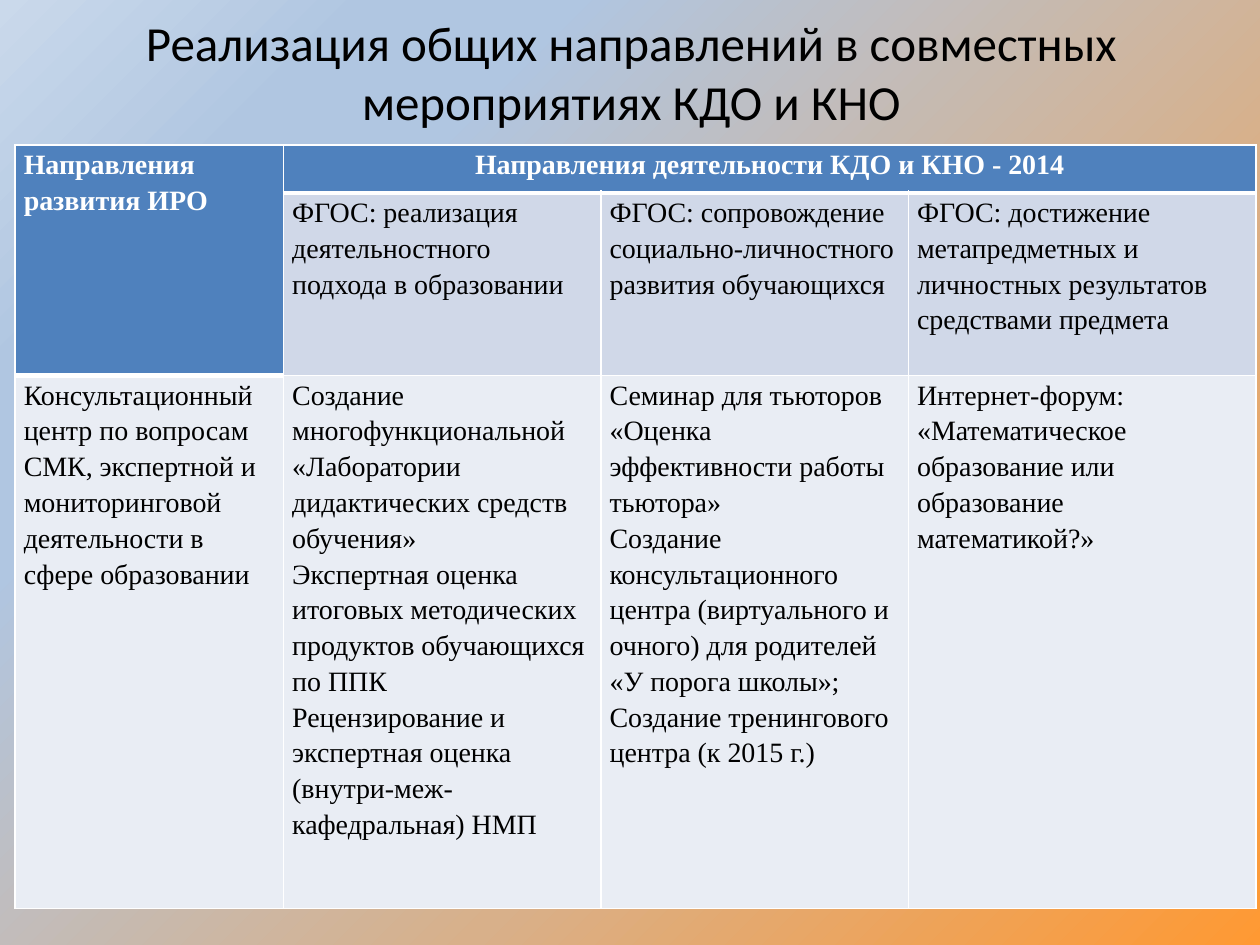
import pptx
import pptx.util
import pptx.dml.color
import pptx.enum.text
import pptx.oxml
import pptx.oxml.ns

Pt = pptx.util.Pt
RGBColor = pptx.dml.color.RGBColor
ALIGN = pptx.enum.text.PP_ALIGN
ANCHOR = pptx.enum.text.MSO_ANCHOR

BLACK = RGBColor(0x00, 0x00, 0x00)
WHITE = RGBColor(0xFF, 0xFF, 0xFF)
HEADER_BLUE = RGBColor(0x4F, 0x81, 0xBD)
BAND_DARK = RGBColor(0xD0, 0xD8, 0xE8)
BAND_LIGHT = RGBColor(0xE9, 0xED, 0xF4)
BACKGROUND_STOPS = [
    (0, RGBColor(0xFF, 0x99, 0x33)),
    (36, RGBColor(0xD8, 0xB0, 0x8A)),
    (74, RGBColor(0xB0, 0xC6, 0xE1)),
    (83, RGBColor(0xB0, 0xC6, 0xE1)),
    (100, RGBColor(0xCA, 0xD9, 0xEB)),
]

TITLE = "Реализация общих направлений в совместных мероприятиях КДО и КНО"
COLUMN_WIDTHS = [153.4, 181.4, 175.7, 198.7]
ROW_HEIGHTS = [27.4, 104.4, 304.6]
ROWS = [
    [
        ["Направления развития ИРО"],
        ["Направления деятельности КДО и КНО - 2014"],
        None,
        None,
    ],
    [
        None,
        ["ФГОС: реализация деятельностного подхода в образовании"],
        ["ФГОС: сопровождение социально-личностного развития обучающихся"],
        ["ФГОС: достижение метапредметных и личностных результатов средствами предмета"],
    ],
    [
        ["Консультационный центр по вопросам СМК, экспертной и мониторинговой "
         "деятельности в сфере образовании"],
        ["Создание многофункциональной «Лаборатории дидактических средств обучения»",
         "Экспертная оценка итоговых методических продуктов обучающихся по ППК",
         "Рецензирование и экспертная оценка (внутри-меж-кафедральная) НМП"],
        ["Семинар для тьюторов «Оценка эффективности работы тьютора»",
         "Создание консультационного центра (виртуального и очного) для родителей "
         "«У порога школы»; Создание тренингового центра (к 2015 г.)"],
        ["Интернет-форум: «Математическое образование или образование математикой?»"],
    ],
]


def apply_format(target, values):
    for name, value in values.items():
        setattr(target, name, value)


def write_paragraphs(frame, texts, para_format, font_format, color):
    for index, text in enumerate(texts):
        para = frame.paragraphs[0] if index == 0 else frame.add_paragraph()
        apply_format(para, para_format)
        span = para.add_run()
        span.text = text
        apply_format(span.font, font_format)
        span.font.color.rgb = color


def paint_background(page):
    fill = page.background.fill
    fill.gradient()
    fill.gradient_angle = 135
    stops = page.element.find(".//" + pptx.oxml.ns.qn("a:gsLst"))
    for stop in list(stops):
        stops.remove(stop)
    for position, color in BACKGROUND_STOPS:
        stops.append(pptx.oxml.parse_xml(
            f'<a:gs {pptx.oxml.ns.nsdecls("a")} pos="{position * 1000}">'
            f'<a:srgbClr val="{color}"/></a:gs>'))


def add_title(page, left, top, width, height):
    box = page.shapes.add_textbox(Pt(left), Pt(top), Pt(width), Pt(height))
    apply_format(box.text_frame, {"word_wrap": True, "vertical_anchor": ANCHOR.MIDDLE})
    write_paragraphs(box.text_frame, [TITLE], {"alignment": ALIGN.CENTER},
                     {"name": "Calibri", "size": Pt(28)}, BLACK)


def is_header(row, column):
    return row == 0 or (row == 1 and column == 0)


def set_borders(cell, widths):
    properties = cell._tc.get_or_add_tcPr()
    for side, width in widths.items():
        properties.append(pptx.oxml.parse_xml(
            f'<a:ln{side} {pptx.oxml.ns.nsdecls("a")} w="{Pt(width)}">'
            f'<a:solidFill><a:srgbClr val="{WHITE}"/></a:solidFill></a:ln{side}>'))


def fill_cell(cell, row, column, texts):
    header = is_header(row, column)
    below_header = row > 0 and is_header(row - 1, column)
    set_borders(cell, {"L": 1, "R": 1, "T": 3 if below_header else 1,
                       "B": 3 if header else 1})
    cell.fill.solid()
    cell.fill.fore_color.rgb = HEADER_BLUE if header else (BAND_DARK if row == 1 else BAND_LIGHT)
    apply_format(cell, {"margin_left": Pt(5), "margin_right": Pt(5),
                        "margin_top": 0, "margin_bottom": 0})
    if texts:
        centered = row == 0 and column > 0
        write_paragraphs(
            cell.text_frame, texts,
            {"alignment": ALIGN.CENTER if centered else ALIGN.LEFT, "line_spacing": 1.15},
            {"name": "Times New Roman", "size": Pt(16), "bold": header},
            WHITE if header else BLACK)


def add_directions_table(page, left, top):
    frame = page.shapes.add_table(
        len(ROW_HEIGHTS), len(COLUMN_WIDTHS), Pt(left), Pt(top),
        Pt(sum(COLUMN_WIDTHS)), Pt(sum(ROW_HEIGHTS)))
    table = frame.table
    for column, width in zip(table.columns, COLUMN_WIDTHS):
        column.width = Pt(width)
    for row, height in zip(table.rows, ROW_HEIGHTS):
        row.height = Pt(height)
    table.cell(0, 0).merge(table.cell(1, 0))
    table.cell(0, 1).merge(table.cell(0, 3))
    for row, cells in enumerate(ROWS):
        for column, texts in enumerate(cells):
            fill_cell(table.cell(row, column), row, column, texts)


def main():
    deck = pptx.Presentation()
    apply_format(deck, {"slide_width": Pt(720), "slide_height": Pt(540)})
    page = deck.slides.add_slide(deck.slide_layouts[6])
    paint_background(page)
    add_title(page, 36.7, 9.4, 648, 62.6)
    add_directions_table(page, 8.6, 82.8)
    deck.save("out.pptx")


if __name__ == "__main__":
    main()
